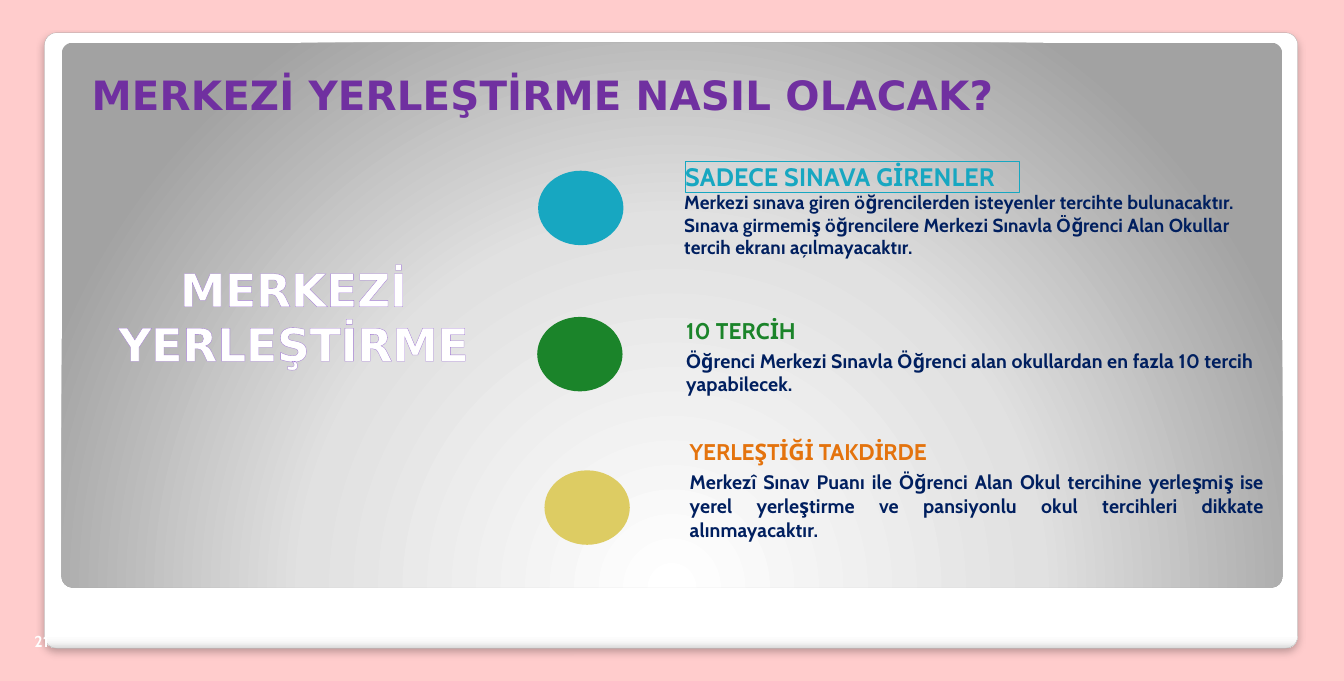
from lxml import etree
from pptx import Presentation
from pptx import util as u
from pptx.dml.color import RGBColor
from pptx.enum import shapes, text
from pptx.oxml.ns import nsdecls, qn

PX = 9144  # 100 px to the inch
NAVY, TEAL, GREEN, ORANGE, SAND = "001F5F", "17A7C1", "1B842A", "E4730D", "DDCC63"


def px(*lengths):
    return [u.Emu(length * PX) for length in lengths]


def paint(target, color):
    """Give a fill or line fill one solid colour."""
    target.solid()
    target.fore_color.rgb = RGBColor.from_string(color)


def set_frame(frame, insets=(0, 0, 0, 0), anchor=text.MSO_ANCHOR.TOP):
    frame.word_wrap = True
    frame.auto_size = text.MSO_AUTO_SIZE.NONE
    frame.vertical_anchor = anchor
    (frame.margin_left, frame.margin_top,
     frame.margin_right, frame.margin_bottom) = px(*insets)


def add_para(frame, words, size, color, font="Cabin", align=text.PP_ALIGN.LEFT,
             indent=0, before=0, leading=None, tracking=0.1, outline=None):
    """Write one bold paragraph, using the empty first one if there is one."""
    first = frame.paragraphs[0]
    para = frame.add_paragraph() if first.runs else first
    para.alignment = align
    para.space_before = u.Pt(before)
    if leading:
        para.line_spacing = leading
    properties = para._p.get_or_add_pPr()
    properties.set("marL", str(indent * PX))
    properties.set("indent", "0")
    span = para.add_run()
    span.text = words
    span.font.size, span.font.name, span.font.bold = u.Pt(size), font, True
    paint(span.font.fill, color)
    run_properties = span._r.get_or_add_rPr()
    run_properties.set("spc", str(round(tracking * 100)))
    if outline:
        run_properties.insert(0, etree.fromstring(
            f'<a:ln {nsdecls("a")} w="{u.Pt(2.48)}"><a:solidFill>'
            f'<a:srgbClr val="{outline}"/></a:solidFill></a:ln>'))


def add_box(page, box, insets=(0, 0, 0, 0)):
    frame = page.shapes.add_textbox(*px(*box)).text_frame
    set_frame(frame, insets)
    return frame


def add_plain_shape(page, kind, box, fill=None, line=None, weight=0.75):
    shape = page.shapes.add_shape(kind, *px(*box))
    shape.shadow.inherit = False
    if fill:
        paint(shape.fill, fill)
    else:
        shape.fill.background()
    if line:
        paint(shape.line.fill, line)
        shape.line.width = u.Pt(weight)
    else:
        shape.line.fill.background()
    return shape


def add_panel(page, box, stops, direction, line=None):
    """Draw a rounded panel with a gradient of (percent, colour) stops."""
    panel = add_plain_shape(page, shapes.MSO_SHAPE.ROUNDED_RECTANGLE, box,
                            line=line, weight=0.16)
    panel.adjustments[0] = 0.02
    marks = "".join(f'<a:gs pos="{percent * 1000}"><a:srgbClr val="{color}"/></a:gs>'
                    for percent, color in stops)
    properties = panel._element.spPr
    properties.replace(properties.find(qn("a:noFill")), etree.fromstring(
        f'<a:gradFill {nsdecls("a")} rotWithShape="1"><a:gsLst>{marks}</a:gsLst>'
        f'{direction}</a:gradFill>'))
    return panel


def add_backdrop(page, box):
    left, top, width, height = box
    card = add_panel(page, box,
                     [(0, "FFFFFF"), (98, "FFFFFF"), (99, "F7F7F7"), (100, "DADADA")],
                     '<a:lin ang="5400000" scaled="0"/>', line="A4A4A4")
    card._element.spPr.find(qn("a:effectLst")).append(etree.fromstring(
        f'<a:outerShdw {nsdecls("a")} blurRad="{u.Pt(6)}" dist="{u.Pt(4)}" '
        'dir="5400000" algn="t" rotWithShape="0"><a:srgbClr val="000000">'
        '<a:alpha val="25000"/></a:srgbClr></a:outerShdw>'))
    add_panel(page, (left + 19, top + 11, width - 36, height - 78),
              [(0, "FFFFFF"), (55, "E1E1E1"), (100, "A2A2A2")],
              '<a:path path="circle"><a:fillToRect l="50000" t="175000" '
              'r="50000" b="-75000"/></a:path>')


def add_title(page, box):
    title = page.shapes.title
    page.shapes._spTree.append(title._element)  # in front of the backdrop
    title.left, title.top, title.width, title.height = px(*box)
    set_frame(title.text_frame, (0, 2, 0, 0), text.MSO_ANCHOR.BOTTOM)
    add_para(title.text_frame, "MERKEZİ YERLEŞTİRME NASIL OLACAK?", 32, "7030A0",
             font="DejaVu Sans", indent=2, before=1.3)


def add_rules(page, box):
    """Write the framed first heading and the text of all three rules."""
    left, top, width, height = box
    heading = add_plain_shape(page, shapes.MSO_SHAPE.RECTANGLE,
                              (left + 2, top, 368, 34), line=TEAL).text_frame
    set_frame(heading)
    add_para(heading, "SADECE SINAVA GİRENLER", 20, TEAL, leading=u.Pt(23.6))

    rules = add_box(page, (left, top + 31, width, height - 31), (0, 1, 58, 0))
    add_para(rules, "Merkezi sınava giren öğrencilerden isteyenler tercihte "
             "bulunacaktır. Sınava girmemiş öğrencilere Merkezi Sınavla Öğrenci "
             "Alan Okullar tercih ekranı açılmayacaktır.", 15, NAVY,
             indent=1, before=1)
    add_para(rules, "10 TERCİH", 18, GREEN, indent=3, before=46)
    add_para(rules, "Öğrenci Merkezi Sınavla Öğrenci alan okullardan en fazla "
             "10 tercih yapabilecek.", 15.5, NAVY, indent=3, before=3.5,
             leading=1.01, tracking=0.15)
    add_para(rules, "YERLEŞTİĞİ TAKDİRDE", 18, ORANGE, indent=7, before=33.3,
             tracking=0)
    add_para(rules, "Merkezî Sınav Puanı ile Öğrenci Alan Okul tercihine "
             "yerleşmiş ise yerel yerleştirme ve pansiyonlu okul tercihleri "
             "dikkate alınmayacaktır.", 15.5, NAVY, indent=7, before=3.1,
             leading=1.03, align=text.PP_ALIGN.JUSTIFY)


def add_dots(page):
    for left, top, color in ((593, 188, TEAL), (592, 349, GREEN), (600, 518, SAND)):
        add_plain_shape(page, shapes.MSO_SHAPE.OVAL, (left, top, 94, 82), color)


def add_topic(page, box):
    topic = add_box(page, box, (10, 5, 10, 5))
    for word in ("MERKEZİ", "YERLEŞTİRME"):
        add_para(topic, word, 36, "FFFFFF", font="DejaVu Sans",
                 align=text.PP_ALIGN.CENTER, tracking=0, outline="A27BD3")


def main():
    deck = Presentation()
    deck.slide_width, deck.slide_height = px(1481, 750)
    page = deck.slides.add_slide(deck.slide_layouts.get_by_name("Title Only"))
    paint(page.background.fill, "FFCCCC")
    add_backdrop(page, (49, 36, 1381, 678))
    add_title(page, (99, 75, 1172, 56))
    add_para(add_box(page, (37, 694, 26, 23), (0, 2, 0, 0)), "21", 12.5, "FFFFFF",
             indent=1, before=1.2)
    add_rules(page, (753, 178, 698, 421))
    add_dots(page)
    add_topic(page, (90, 283, 467, 131))
    deck.save("out.pptx")


if __name__ == "__main__":
    main()
